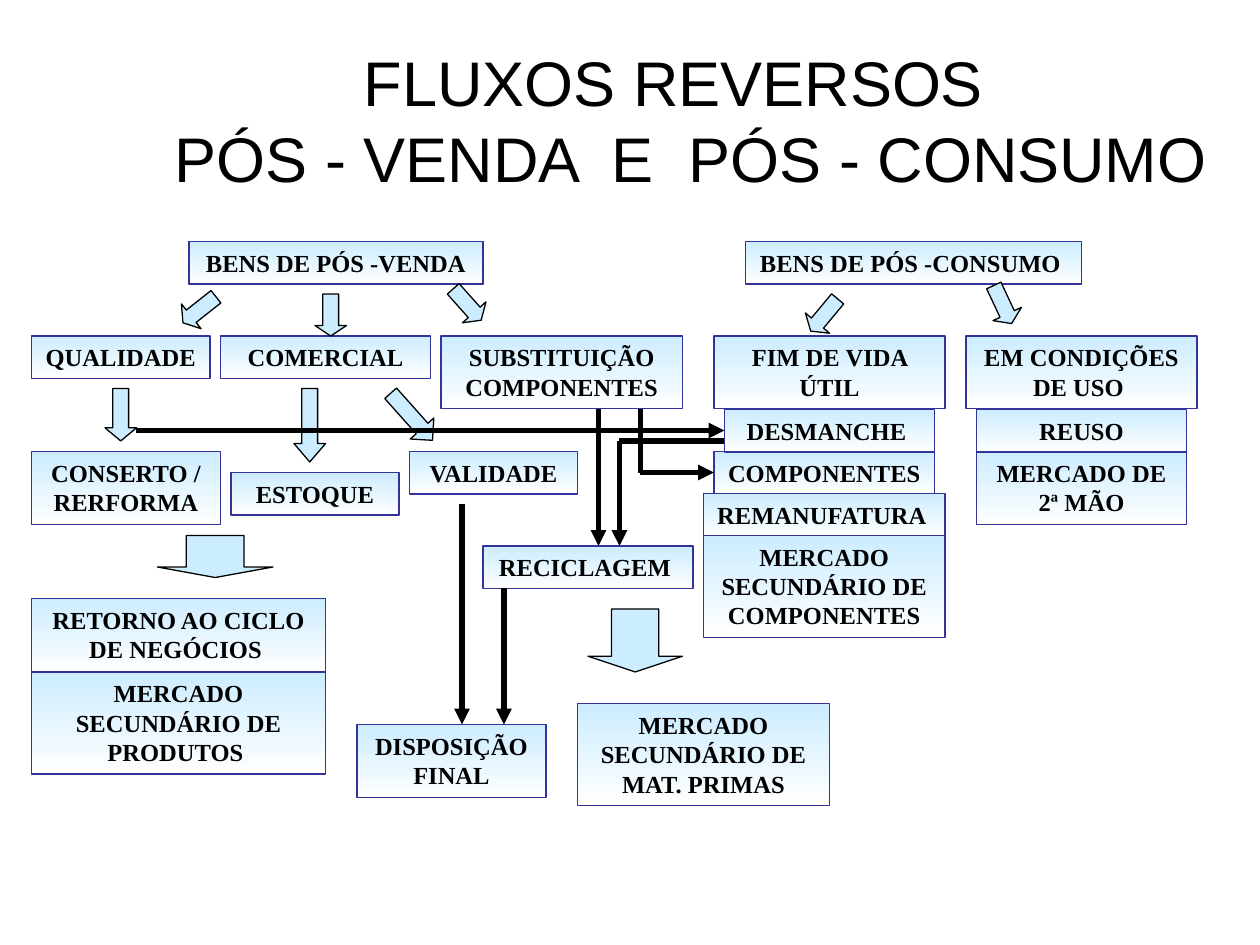
from lxml.etree import SubElement
from pptx import Presentation
from pptx.dml.color import RGBColor
from pptx.enum.shapes import MSO_CONNECTOR as Connector, MSO_SHAPE as Shape
from pptx.enum.text import MSO_ANCHOR as Anchor, MSO_AUTO_SIZE as AutoSize, PP_ALIGN as Align
from pptx.oxml.ns import qn
from pptx.util import Cm, Pt

BLACK = RGBColor(0x00, 0x00, 0x00)
WHITE = RGBColor(0xFF, 0xFF, 0xFF)
PALE_BLUE = RGBColor(0xCC, 0xEC, 0xFF)
INDIGO = RGBColor(0x33, 0x33, 0x99)


def grid(steps):
    """The slide is 120 steps wide and 90 steps high."""
    return Cm(25.4 * steps / 120)


def style_text(para, font_name, size, bold):
    para.alignment = Align.CENTER
    para.font.name = font_name
    para.font.size = Pt(size)
    para.font.bold = bold
    para.font.color.rgb = BLACK


deck = Presentation()
deck.slide_width, deck.slide_height = grid(120), grid(90)
page = deck.slides.add_slide(deck.slide_layouts[6])
shapes = page.shapes

# Title
title = shapes.add_textbox(grid(10), grid(6), grid(110), Cm(2.26))
title.text_frame.word_wrap = True
title.text_frame.vertical_anchor = Anchor.MIDDLE
para = title.text_frame.paragraphs[0]
para.text = "FLUXOS REVERSOS \v PÓS - VENDA  E  PÓS - CONSUMO"
style_text(para, "Arial", 36, False)

# Boxes: left, top, width in grid steps, number of text lines, text
BOX_HEIGHTS = {1: Cm(0.86), 2: Cm(1.47), 3: Cm(2.06)}
boxes = [
    (18, 23, 28, 1, "BENS DE PÓS -VENDA"),
    (21, 32, 20, 1, "COMERCIAL"),
    (3, 32, 17, 1, "QUALIDADE"),
    (42, 32, 23, 2, "SUBSTITUIÇÃO COMPONENTES"),
    (71, 23, 32, 1, "BENS DE PÓS -CONSUMO "),
    (68, 32, 22, 2, "FIM DE VIDA ÚTIL"),
    (92, 32, 22, 2, "EM CONDIÇÕES DE USO "),
    (22, 45, 16, 1, "ESTOQUE"),
    (3, 43, 18, 2, "CONSERTO / RERFORMA"),
    (39, 43, 16, 1, "VALIDADE"),
    (3, 57, 28, 2, "RETORNO AO CICLO DE NEGÓCIOS "),
    (3, 64, 28, 3, "MERCADO SECUNDÁRIO DE PRODUTOS "),
    (34, 69, 18, 2, "DISPOSIÇÃO FINAL"),
    (46, 52, 20, 1, "RECICLAGEM "),
    (68, 43, 21, 1, "COMPONENTES "),
    (69, 39, 20, 1, "DESMANCHE "),
    (67, 47, 23, 1, "REMANUFATURA "),
    (67, 51, 23, 3, "MERCADO SECUNDÁRIO DE COMPONENTES"),
    (93, 43, 20, 2, "MERCADO DE 2ª MÃO"),
    (93, 39, 20, 1, "REUSO"),
    (55, 67, 24, 3, "MERCADO SECUNDÁRIO DE MAT. PRIMAS"),
]
for left, top, width, lines, text in boxes:
    box = shapes.add_shape(Shape.RECTANGLE, grid(left), grid(top), grid(width), BOX_HEIGHTS[lines])
    box.shadow.inherit = False
    box.fill.gradient()
    box.fill.gradient_angle = 270
    for stop, color in zip(box.fill.gradient_stops, (PALE_BLUE, WHITE)):
        stop.color.rgb = color
    box.fill.gradient_stops[0].position = 0
    box.fill.gradient_stops[1].position = 1
    box.line.color.rgb = INDIGO
    box.line.width = Pt(0.75)
    frame = box.text_frame
    frame.word_wrap = True
    frame.auto_size = AutoSize.SHAPE_TO_FIT_TEXT
    frame.vertical_anchor = Anchor.TOP
    frame.text = text
    style_text(frame.paragraphs[0], "Times New Roman", 14, True)

# Block arrows: left, top, width, height in grid steps, rotation
block_arrows = [
    (30, 28, 3, 4, 0),
    (17.5, 27.5, 3, 4, 51.7),
    (43, 27, 3, 4, 318.3),
    (94, 27, 3, 4, 334.9),
    (77, 28, 3, 4, 39.9),
    (28, 37, 3, 7, 0),
    (37.7, 36.7, 3, 6, 318.3),
    (15, 51, 11, 4, 0),
    (56, 58, 9, 6, 0),
    (10, 37, 3, 5, 0),
]
for left, top, width, height, rotation in block_arrows:
    arrow = shapes.add_shape(Shape.DOWN_ARROW, grid(left), grid(top), grid(width), grid(height))
    arrow.shadow.inherit = False
    arrow.rotation = rotation
    # The head takes a quarter of the arrow's length
    arrow.adjustments[0] = 0.5
    arrow.adjustments[1] = height / 4 / min(width, height)
    arrow.fill.solid()
    arrow.fill.fore_color.rgb = PALE_BLUE
    arrow.line.color.rgb = BLACK
    arrow.line.width = Pt(0.75)

# Flow lines: start x, start y, end x, end y in grid steps, arrowhead
flow_lines = [
    (57, 39, 57, 52, True),
    (44, 48, 44, 69, True),
    (59, 42, 59, 52, True),
    (13, 41, 69, 41, True),
    (48, 56, 48, 69, True),
    (69, 42, 59, 42, False),
    (61, 39, 61, 45, False),
    (61, 45, 68, 45, True),
]
for *points, has_head in flow_lines:
    flow = shapes.add_connector(Connector.STRAIGHT, *map(grid, points))
    flow.line.color.rgb = BLACK
    flow.line.width = Pt(3)
    properties = flow.element.spPr
    if has_head:
        SubElement(properties.find(qn("a:ln")), qn("a:tailEnd"), type="triangle")
    SubElement(properties, qn("a:effectLst"))

deck.save("out.pptx")
